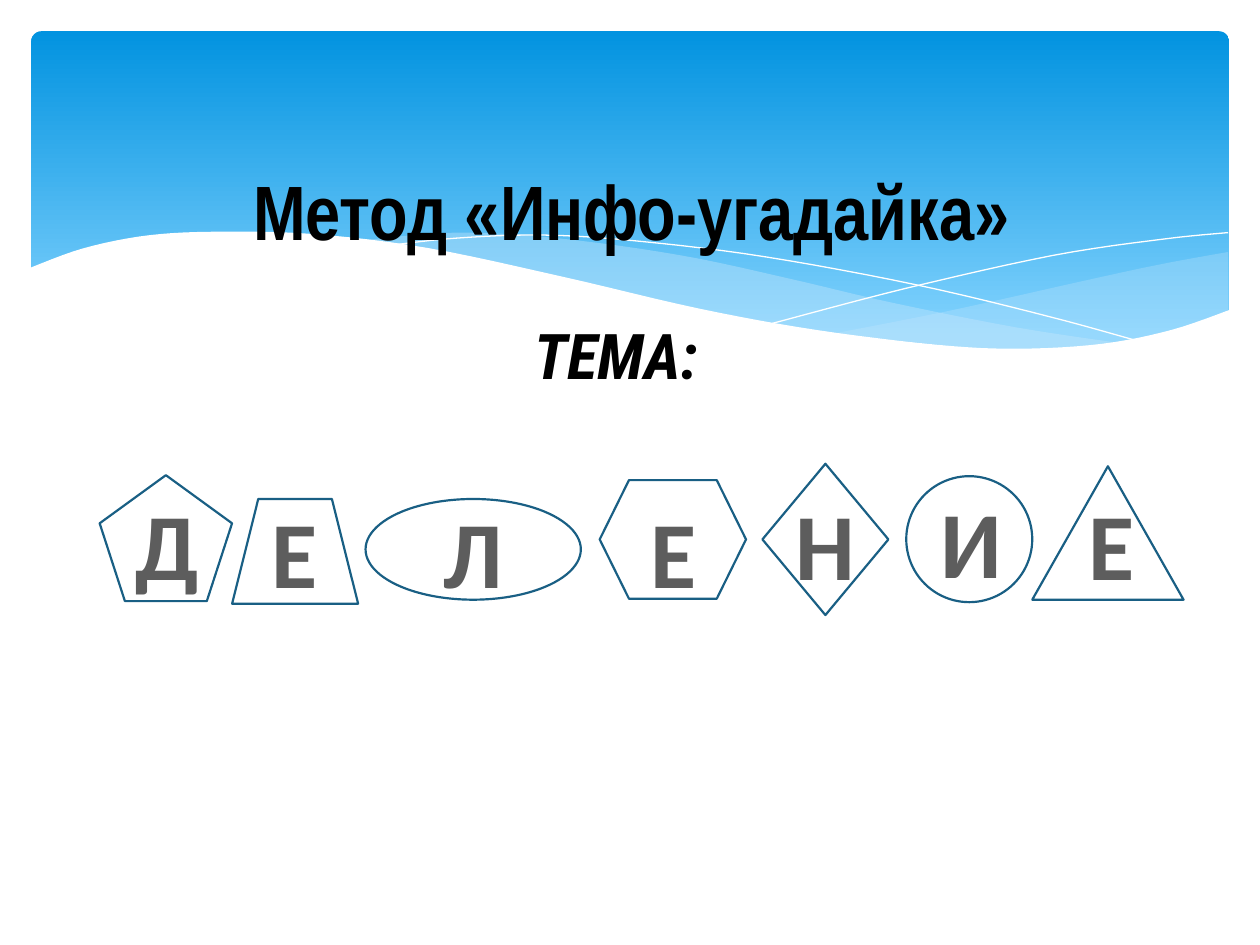
from lxml.etree import SubElement
from pptx import Presentation
from pptx.dml.color import RGBColor
from pptx.enum.shapes import MSO_SHAPE as Shape
from pptx.enum.text import MSO_ANCHOR as Anchor, PP_ALIGN as Align
from pptx.oxml.ns import qn
from pptx.util import Cm, Pt

COLORS = {"sky": "0293E0", "pale_sky": "83D3FE", "mist": "C6E7FC",
          "white": "FFFFFF", "outline": "195F84", "title": "000000", "letter": "5D5D5D"}

# Wave edges as knots in cm, measured from the banner's corner
RIGHT_WAVE = [
    [(24.13, 4.45), (22.76, 4.7), (21.23, 5.03), (18.49, 5.64), (16.15, 6.1)],
    [(16.15, 6.1), (17.63, 6.25), (19.2, 6.4), (20.57, 6.4), (21.77, 6.3),
     (22.94, 6.05), (24.13, 5.64)]]
MIDDLE_WAVE = [
    [(22.05, 6.3), (19.86, 5.97), (17.3, 5.46), (15.34, 5), (13.11, 4.52),
     (10.59, 4.17), (8.53, 4.06), (6.63, 4.22)],
    [(6.63, 4.22), (8.56, 4.52), (10.77, 5), (13.74, 5.66), (16.26, 6.12),
     (18.37, 6.38), (20.14, 6.43), (22.05, 6.3)]]
FALLING_LINE = [[(7.21, 4.32), (8.59, 4.17), (10.36, 4.11), (12.32, 4.24),
                 (14.81, 4.55), (17.83, 5.11), (20.47, 5.74), (22.4, 6.27)]]
RISING_LINE = [[(14.94, 5.89), (17.65, 5.18), (20.6, 4.52), (22.83, 4.19), (24.13, 4.06)]]
WHITE_WAVE = [
    [(-0.05, 4.78), (1.07, 4.37), (2.39, 4.11), (3.86, 4.04), (5.72, 4.09), (8, 4.37),
     (10.72, 4.95), (13.46, 5.59), (15.82, 6.02), (18.26, 6.32), (19.91, 6.4),
     (21.59, 6.3), (22.99, 6.02), (24.18, 5.61)],
    [(24.18, 7.72), (-0.05, 7.72)]]

# Letter, its figure, figure box and letter box (left, top, width), in cm from the row's corner
FIGURES = [
    ("Д", Shape.REGULAR_PENTAGON, (0, 0.23, 2.67, 2.54), (0.25, 0.33, 2.24)),
    ("Е", Shape.TRAPEZOID, (2.67, 0.71, 2.54, 2.11), (3.17, 0.48, 1.52)),
    ("Л", Shape.OVAL, (5.36, 0.71, 4.34, 2.03), (6.38, 0.48, 2.29)),
    ("Е", Shape.FLOWCHART_PREPARATION, (10.08, 0.33, 2.95, 2.39), (10.8, 0.48, 1.52)),
    ("Н", Shape.DIAMOND, (13.36, 0, 2.54, 3.05), (13.74, 0.33, 1.78)),
    ("И", Shape.OVAL, (16.26, 0.25, 2.54, 2.54), (16.66, 0.28, 1.83)),
    ("Е", Shape.ISOSCELES_TRIANGLE, (18.8, 0.05, 3.05, 2.69), (19.63, 0.33, 1.52)),
]
LETTER_HEIGHT = 2.57


def color(name):
    return RGBColor.from_string(COLORS[name])


def smooth(knots, steps=6):
    """Catmull-Rom curve through the knots."""
    padded = [knots[0], *knots, knots[-1]]
    curve = [knots[0]]
    for a, b, c, d in zip(padded, padded[1:], padded[2:], padded[3:]):
        for step in range(1, steps + 1):
            t = step / steps
            curve.append(tuple(
                (2 * q + (r - p) * t + (2 * p - 5 * q + 4 * r - s) * t ** 2
                 + (3 * q - p - 3 * r + s) * t ** 3) / 2
                for p, q, r, s in zip(a, b, c, d)))
    return curve


def add_wave(slide, left, top, edges, fill=None, opacity=100):
    """A filled wave, or a white hairline when no fill is given."""
    points = [(Cm(left + x), Cm(top + y)) for edge in edges
              for x, y in (smooth(edge) if len(edge) > 2 else edge)]
    builder = slide.shapes.build_freeform(*points[0], scale=1.0)
    builder.add_line_segments(points[1:], close=fill is not None)
    wave = builder.convert_to_shape()
    wave.shadow.inherit = False
    if fill is None:
        wave.fill.background()
        wave.line.color.rgb = color("white")
        wave.line.width = 0
        return
    wave.fill.solid()
    wave.fill.fore_color.rgb = color(fill)
    wave.line.fill.background()
    if opacity < 100:
        tint = wave.fill._xPr.find(qn("a:solidFill"))[0]
        SubElement(tint, qn("a:alpha")).set("val", str(opacity * 1000))


def add_text(frame, text, *, size, font, fill, italic=False, first=True, before=0, indent=0):
    paragraph = frame.paragraphs[0] if first else frame.add_paragraph()
    paragraph.alignment = Align.CENTER
    paragraph.space_before = Pt(before)
    if indent:
        paragraph._p.get_or_add_pPr().set("marL", str(Pt(indent)))
    run = paragraph.add_run()
    run.text = text
    run.font.size, run.font.name = Pt(size), font
    run.font.bold, run.font.italic = True, italic
    run.font.color.rgb = color(fill)


def add_banner(slide, left, top, width, height):
    sky = slide.shapes.add_shape(Shape.ROUNDED_RECTANGLE,
                                 Cm(left), Cm(top), Cm(width), Cm(height))
    sky.adjustments[0] = 0.03
    sky.shadow.inherit = False
    sky.line.fill.background()
    sky.fill.gradient()
    sky.fill.gradient_angle = 270
    for stop, name, position in zip(sky.fill.gradient_stops, ("sky", "pale_sky"), (0, 0.9)):
        stop.color.rgb = color(name)
        stop.position = position
    # Waves, from back to front
    add_wave(slide, left, top, RIGHT_WAVE, "mist", 29)
    add_wave(slide, left, top, MIDDLE_WAVE, "mist", 40)
    add_wave(slide, left, top, FALLING_LINE)
    add_wave(slide, left, top, RISING_LINE)
    add_wave(slide, left, top, WHITE_WAVE, "white")


def add_heading(slide, left, top, width, height):
    heading = slide.shapes.add_textbox(Cm(left), Cm(top), Cm(width), Cm(height)).text_frame
    heading.word_wrap = True
    heading.vertical_anchor = Anchor.BOTTOM
    add_text(heading, "Метод «Инфо-угадайка»", size=44, font="Arial Narrow",
             fill="title", indent=18)
    add_text(heading, "ТЕМА:", size=36, font="Roboto Condensed", fill="title",
             italic=True, first=False, before=35)


def add_figure_row(slide, left, top):
    # Outlined figures
    for _, kind, (x, y, width, height), _ in FIGURES:
        figure = slide.shapes.add_shape(kind, Cm(left + x), Cm(top + y), Cm(width), Cm(height))
        figure.shadow.inherit = False
        figure.fill.background()
        figure.line.color.rgb = color("outline")
        figure.line.width = Pt(1.25)
    # Letters
    for letter, _, _, (x, y, width) in FIGURES:
        frame = slide.shapes.add_textbox(Cm(left + x), Cm(top + y),
                                         Cm(width), Cm(LETTER_HEIGHT)).text_frame
        frame.word_wrap = True
        add_text(frame, letter, size=54, font="Calibri", fill="letter")


def main():
    deck = Presentation()
    deck.slide_width, deck.slide_height = Cm(25.4), Cm(19.05)
    slide = deck.slides.add_slide(deck.slide_layouts[6])
    add_banner(slide, 0.63, 0.63, 24.15, 6.86)
    add_heading(slide, 0.71, 0.94, 23.42, 7.1)
    add_figure_row(slide, 2.01, 9.35)
    deck.save("out.pptx")


if __name__ == "__main__":
    main()
